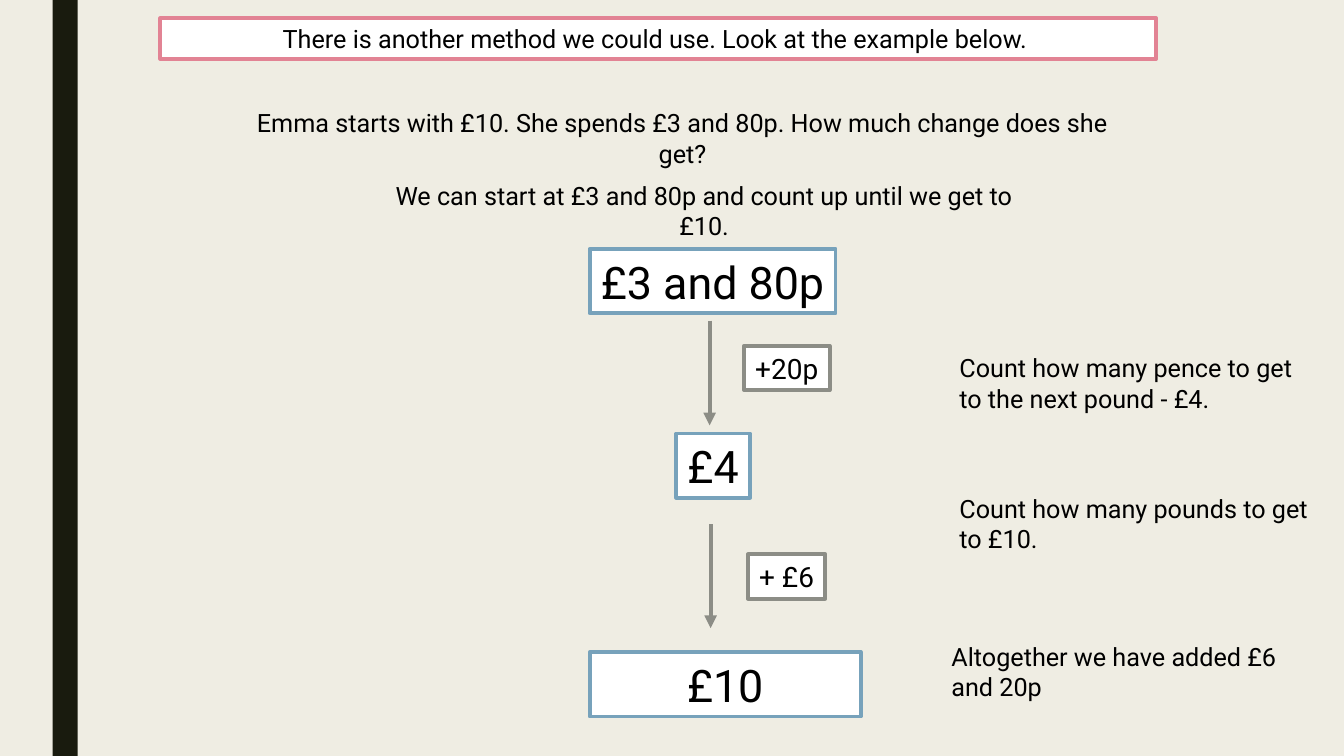
from dataclasses import dataclass

from lxml import etree
from pptx import Presentation
from pptx.dml.color import RGBColor
from pptx.enum import shapes, text
from pptx.oxml import ns
from pptx.util import Pt


@dataclass(frozen=True)
class Theme:
    font: str = "Roboto"
    background: str = "EFEDE3"
    bar: str = "191B0E"
    ink: str = "000000"
    paper: str = "FFFFFF"
    heading: str = "E28394"
    amount: str = "77A2BB"
    step: str = "8C8D86"
    body_size: float = 18
    step_size: float = 20
    amount_size: float = 32
    border: float = 2.75
    arrow: float = 3


@dataclass(frozen=True)
class Area:
    left: float
    top: float
    width: float
    height: float


@dataclass(frozen=True)
class Box:
    wording: str
    area: Area
    border: str
    size: float


@dataclass(frozen=True)
class Passage:
    wording: str
    area: Area
    align: text.PP_ALIGN


@dataclass(frozen=True)
class Arrow:
    x: float
    top: float
    bottom: float


THEME = Theme()
CENTER, LEFT = text.PP_ALIGN.CENTER, text.PP_ALIGN.LEFT

HEADING = Box("There is another method we could use. Look at the example below. ",
              Area(114.5, 13, 711.4, 29), THEME.heading, THEME.body_size)

BOXES = [
    Box("£3 and 80p", Area(421.2, 177.8, 175.7, 46), THEME.amount, THEME.amount_size),
    Box("+20p", Area(531.4, 247, 61.2, 31.6), THEME.step, THEME.step_size),
    Box("£4", Area(483.1, 309.6, 52.6, 46), THEME.amount, THEME.amount_size),
    Box("+ £6", Area(534.2, 396, 55.4, 31.6), THEME.step, THEME.step_size),
    Box("£10", Area(421.2, 465.8, 193.7, 46), THEME.amount, THEME.amount_size),
]

PASSAGES = [
    Passage("Emma starts with £10. She spends £3 and 80p. How much change does she get?",
            Area(165, 73.4, 645, 29), CENTER),
    Passage("We can start at £3 and 80p and count up until we get to £10.",
            Area(263.5, 125.3, 478.8, 29), CENTER),
    Passage("Count how many pence to get to the next pound - £4.",
            Area(678.2, 248.4, 265, 51), LEFT),
    Passage("Count how many pounds to get to £10.",
            Area(678.2, 348.5, 265, 51), LEFT),
    Passage("Altogether we have added £6 and 20p",
            Area(672.5, 454.3, 270.7, 51), LEFT),
]

ARROWS = [Arrow(506.9, 229, 303.8), Arrow(507.6, 374.4, 448.6)]


def rgb(value: str) -> RGBColor:
    return RGBColor.from_string(value)


def points(area: Area) -> tuple[Pt, Pt, Pt, Pt]:
    return Pt(area.left), Pt(area.top), Pt(area.width), Pt(area.height)


def write(shape, wording: str, size: float, align: text.PP_ALIGN,
          anchor: text.MSO_ANCHOR, wrap: bool) -> None:
    frame = shape.text_frame
    frame.text = wording
    frame.word_wrap = wrap
    frame.auto_size = text.MSO_AUTO_SIZE.NONE
    frame.vertical_anchor = anchor
    paragraph = frame.paragraphs[0]
    paragraph.alignment = align
    paragraph.line_spacing = 1.0
    paragraph.font.name = THEME.font
    paragraph.font.size = Pt(size)
    paragraph.font.color.rgb = rgb(THEME.ink)


def style_box(shape, box: Box) -> None:
    shape.fill.solid()
    shape.fill.fore_color.rgb = rgb(THEME.paper)
    shape.line.color.rgb = rgb(box.border)
    shape.line.width = Pt(THEME.border)
    write(shape, box.wording, box.size, CENTER, text.MSO_ANCHOR.MIDDLE, False)


def draw_heading(slide) -> None:
    heading = slide.shapes.title
    heading.left, heading.top, heading.width, heading.height = points(HEADING.area)
    style_box(heading, HEADING)


def draw_bar(slide) -> None:
    bar = slide.shapes.add_shape(shapes.MSO_SHAPE.RECTANGLE, *points(Area(37.5, 0, 18, 540)))
    bar.shadow.inherit = False
    bar.fill.solid()
    bar.fill.fore_color.rgb = rgb(THEME.bar)
    bar.line.fill.background()


def draw_box(slide, box: Box) -> None:
    shape = slide.shapes.add_shape(shapes.MSO_SHAPE.RECTANGLE, *points(box.area))
    shape.shadow.inherit = False
    style_box(shape, box)


def draw_passage(slide, passage: Passage) -> None:
    shape = slide.shapes.add_textbox(*points(passage.area))
    write(shape, passage.wording, THEME.body_size, passage.align, text.MSO_ANCHOR.TOP, True)


def draw_arrow(slide, arrow: Arrow) -> None:
    connector = slide.shapes.add_connector(
        shapes.MSO_CONNECTOR.STRAIGHT,
        Pt(arrow.x), Pt(arrow.top), Pt(arrow.x), Pt(arrow.bottom))
    connector.line.color.rgb = rgb(THEME.step)
    connector.line.width = Pt(THEME.arrow)
    properties = connector.element.spPr
    outline = properties.find(ns.qn("a:ln"))
    etree.SubElement(outline, ns.qn("a:tailEnd"), type="triangle")
    etree.SubElement(properties, ns.qn("a:effectLst"))


def main() -> None:
    deck = Presentation()
    deck.slide_width, deck.slide_height = Pt(960), Pt(540)
    slide = deck.slides.add_slide(deck.slide_layouts.get_by_name("Title Only"))
    slide.background.fill.solid()
    slide.background.fill.fore_color.rgb = rgb(THEME.background)
    draw_bar(slide)
    draw_heading(slide)
    for passage in PASSAGES:
        draw_passage(slide, passage)
    for arrow in ARROWS:
        draw_arrow(slide, arrow)
    for box in BOXES:
        draw_box(slide, box)
    deck.save("out.pptx")


if __name__ == "__main__":
    main()
